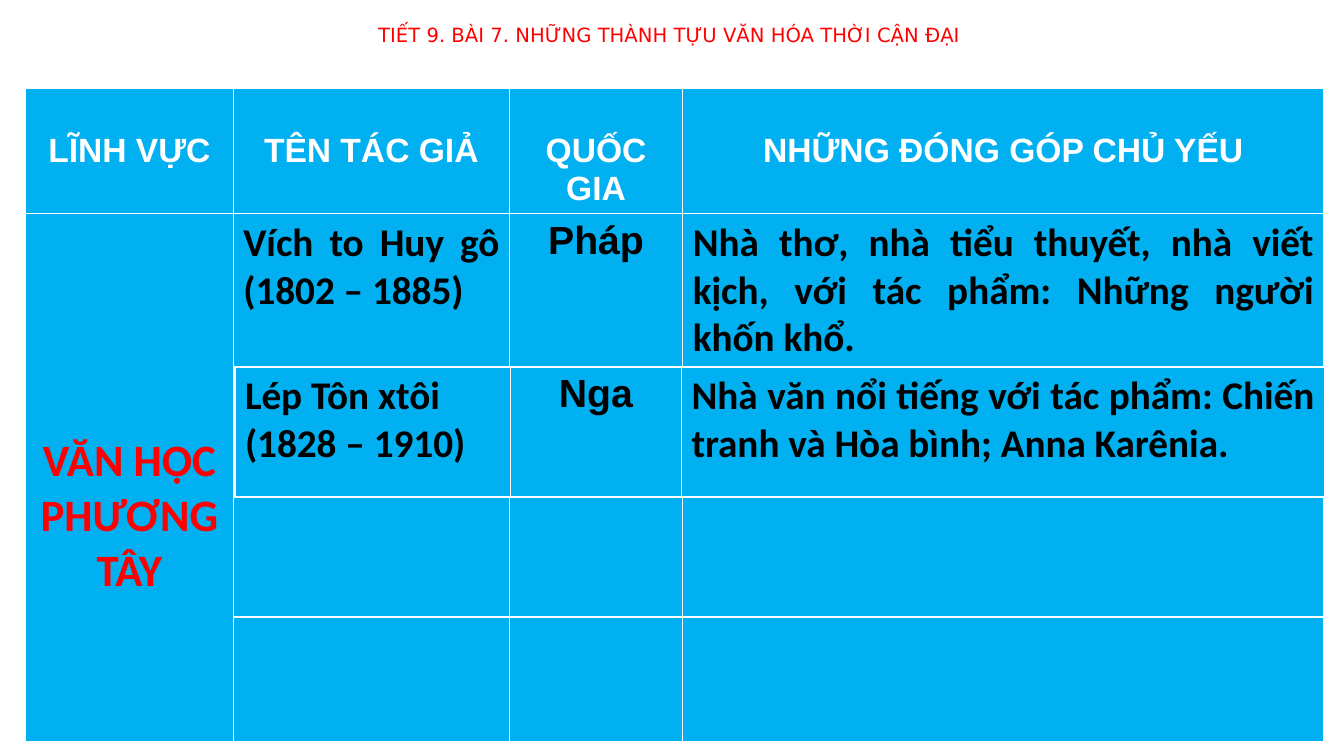
import pptx
import pptx.dml.color
import pptx.enum.text
import pptx.oxml
import pptx.util

Pt = pptx.util.Pt
ALIGN = pptx.enum.text.PP_ALIGN
SKY, RED, WHITE, BLACK, PINK = "00B0F0", "FF0000", "FFFFFF", "000000", "FF3399"

HEADS = ["LĨNH VỰC", "TÊN TÁC GIẢ", "QUỐC GIA", "NHỮNG ĐÓNG GÓP CHỦ YẾU"]
HUGO = [
    ["Vích to Huy gô (1802 – 1885)"],
    ["Pháp"],
    ["Nhà thơ, nhà tiểu thuyết, nhà viết kịch, với tác phẩm: Những người khốn khổ."],
]
TOLSTOY = [
    ["Lép Tôn xtôi", "(1828 – 1910)"],
    ["Nga"],
    ["Nhà văn nổi tiếng với tác phẩm: Chiến tranh và Hòa bình; Anna Karênia."],
]
# Font and alignment of the author, country and work columns
STYLES = [("Calibri", ALIGN.JUSTIFY), ("Arial", ALIGN.CENTER), ("Calibri", ALIGN.JUSTIFY)]


def color(code):
    return pptx.dml.color.RGBColor.from_string(code)


def write(frame, lines, font, size, ink, align, bold=True):
    for i, line in enumerate(lines):
        para = frame.add_paragraph() if i else frame.paragraphs[0]
        para.alignment = align
        run = para.add_run()
        run.text = line
        run.font.name = font
        run.font.size = Pt(size)
        run.font.bold = bold
        run.font.color.rgb = color(ink)


def outline(run, ink, width):
    """Give the letters of a run a coloured edge."""
    line = pptx.oxml.parse_xml(
        '<a:ln xmlns:a="http://schemas.openxmlformats.org/drawingml/2006/main" '
        f'w="{Pt(width)}"><a:solidFill><a:srgbClr val="{ink}"/></a:solidFill></a:ln>'
    )
    run.font._element.insert(0, line)


def add_title(slide, text):
    box = slide.shapes.add_textbox(Pt(80.6), Pt(13), Pt(795), Pt(39.6))
    frame = box.text_frame
    frame.word_wrap = False
    write(frame, [text], "DejaVu Sans", 14, RED, ALIGN.CENTER, bold=False)
    outline(frame.paragraphs[0].runs[0], PINK, 1.5)


def add_grid(slide, left, top, widths, heights):
    """Add a sky-blue table; its default style draws the white rules."""
    grid = slide.shapes.add_table(
        len(heights), len(widths), Pt(left), Pt(top), Pt(sum(widths)), Pt(sum(heights))
    ).table
    grid.horz_banding = False
    for col, width in zip(grid.columns, widths):
        col.width = Pt(width)
    for row, height in zip(grid.rows, heights):
        row.height = Pt(height)
    for cell in grid.iter_cells():
        cell.fill.solid()
        cell.fill.fore_color.rgb = color(SKY)
    return grid


def fill_author(cells, texts):
    for cell, lines, (font, align) in zip(cells, texts, STYLES):
        write(cell.text_frame, lines, font, 28, BLACK, align)


def add_main(slide):
    grid = add_grid(
        slide, 18.3, 63.4, [148.3, 197.3, 123.8, 457.9], [89.3, 109.4, 89.3, 89.3, 89.3]
    )
    for cell, head in zip(grid.rows[0].cells, HEADS):
        cell.margin_top = Pt(31.2)
        cell.margin_bottom = Pt(0)
        write(cell.text_frame, [head], "Arial", 24, WHITE, ALIGN.CENTER)
    field = grid.cell(1, 0)
    field.merge(grid.cell(4, 0))
    field.margin_top = Pt(157.4)
    write(field.text_frame, ["VĂN HỌC PHƯƠNG TÂY"], "Calibri", 32, RED, ALIGN.CENTER)
    fill_author([grid.cell(1, col) for col in range(1, 4)], HUGO)


def add_extra(slide):
    grid = add_grid(slide, 167.8, 262.1, [196.6, 122.4, 459.4], [92.9])
    fill_author(grid.rows[0].cells, TOLSTOY)


def main():
    deck = pptx.Presentation()
    deck.slide_width, deck.slide_height = Pt(960), Pt(540)
    slide = deck.slides.add_slide(deck.slide_layouts[6])
    add_title(slide, "TIẾT 9. BÀI 7. NHỮNG THÀNH TỰU VĂN HÓA THỜI CẬN ĐẠI")
    add_main(slide)
    add_extra(slide)
    deck.save("out.pptx")


if __name__ == "__main__":
    main()
